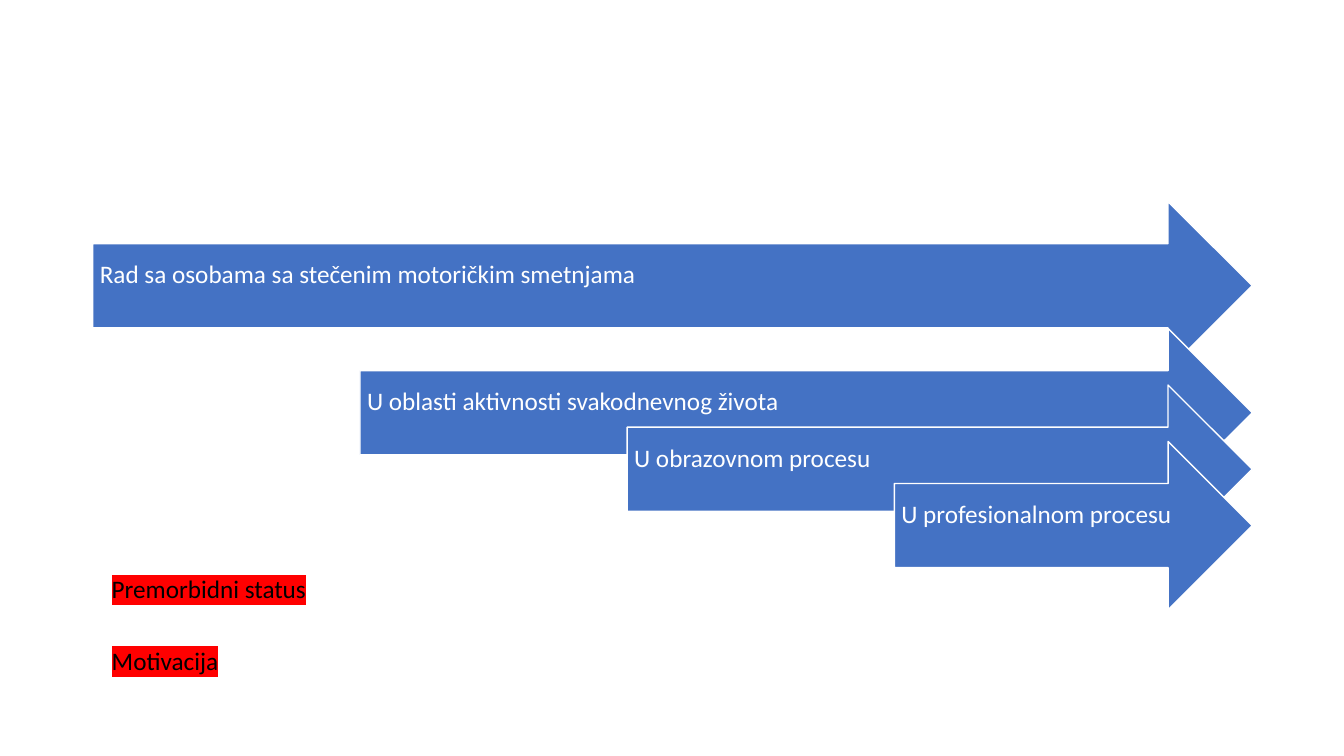
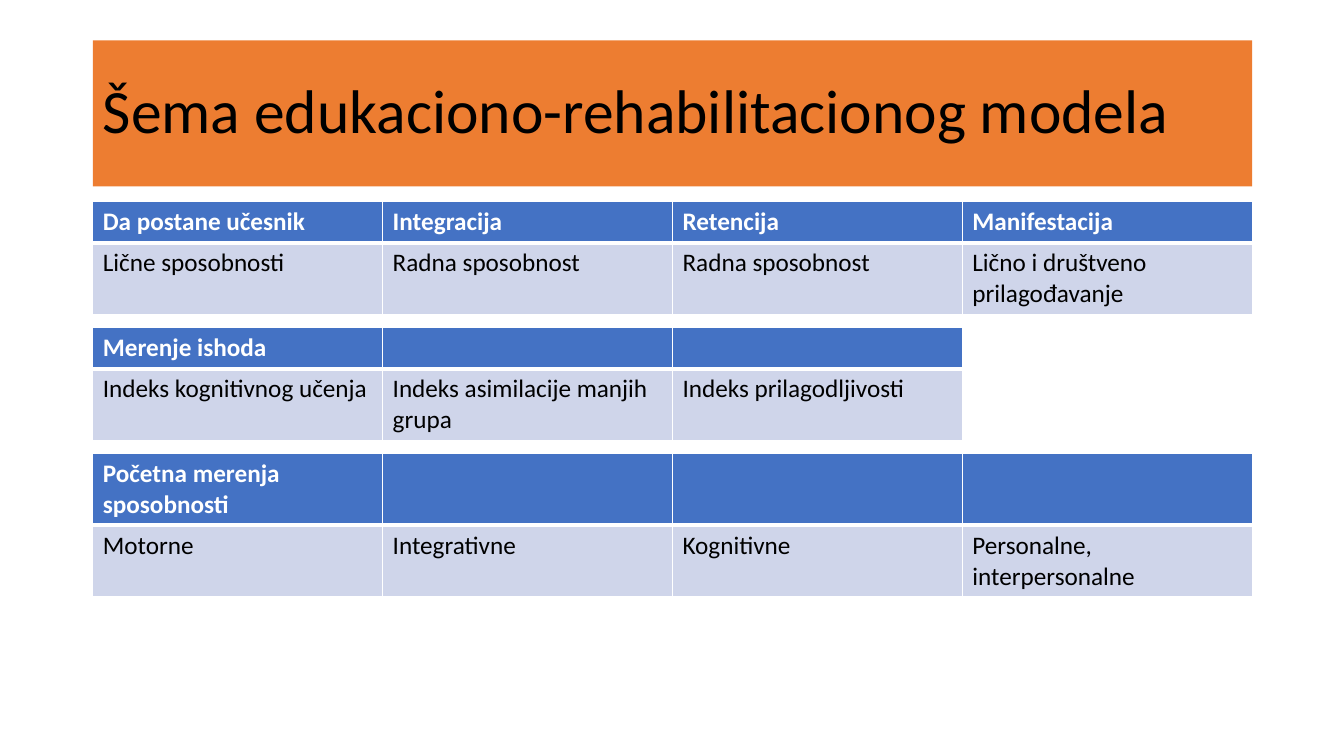
from dataclasses import dataclass

from lxml.etree import SubElement
from pptx import Presentation
from pptx.dml.color import RGBColor
from pptx.enum.shapes import MSO_SHAPE
from pptx.enum.text import MSO_ANCHOR, PP_ALIGN
from pptx.oxml import parse_xml
from pptx.oxml.ns import qn
from pptx.util import Inches, Pt

NS = "http://schemas.openxmlformats.org/drawingml/2006/main"


@dataclass(frozen=True)
class Theme:
    """Colours, type sizes and margins of the deck."""
    blue: str = "4472C4"
    pale: str = "CFD5EA"
    orange: str = "ED7D31"
    red: str = "FF0000"
    white: str = "FFFFFF"
    black: str = "000000"
    font: str = "Calibri"
    head: int = 44
    text: int = 18
    left: float = 0.92
    width: float = 11.5


class Deck:
    """Holds the theme and the current slide, and draws each element."""

    def __init__(self, theme):
        """Start an empty wide deck."""
        self.theme = theme
        self.prs = Presentation()
        self.prs.slide_width = Inches(13.33)
        self.prs.slide_height = Inches(7.5)
        self.slide = None

    def add(self, title=None):
        """Add a slide, with a title band if a title is given."""
        layout = self.prs.slide_layouts[5 if title else 6]
        self.slide = self.prs.slides.add_slide(layout)
        if title:
            self.title(title)

    def paint(self, item, color):
        """Give a shape or cell a solid fill."""
        item.fill.solid()
        item.fill.fore_color.rgb = RGBColor.from_string(color)

    def letter(self, frame, text, color, size=None, bold=False):
        """Put one left-aligned paragraph in a text frame."""
        frame.word_wrap = True
        para = frame.paragraphs[0]
        para.alignment = PP_ALIGN.LEFT
        font = para.font
        font.name = self.theme.font
        font.size = Pt(size or self.theme.text)
        font.bold = bold
        font.color.rgb = RGBColor.from_string(color)
        if text:
            para.add_run().text = text
        return para

    def title(self, text):
        """Fill the title placeholder as a coloured band."""
        t = self.theme
        band = self.slide.shapes.title
        band.left, band.top = Inches(t.left), Inches(0.4)
        band.width, band.height = Inches(t.width), Inches(1.45)
        self.paint(band, t.orange)
        band.text_frame.vertical_anchor = MSO_ANCHOR.MIDDLE
        para = self.letter(band.text_frame, text, t.black, t.head)
        para.line_spacing = 0.9

    def arrow(self, text, indent, top):
        """Draw a labelled arrow that ends at the right margin."""
        t = self.theme
        shape = self.slide.shapes.add_shape(
            MSO_SHAPE.RIGHT_ARROW, Inches(t.left + indent), Inches(top),
            Inches(t.width - indent), Inches(1.67))
        shape.shadow.inherit = False
        self.paint(shape, t.blue)
        shape.line.color.rgb = RGBColor.from_string(t.white)
        shape.line.width = Pt(1)
        frame = shape.text_frame
        frame.vertical_anchor = MSO_ANCHOR.MIDDLE
        frame.margin_left = frame.margin_top = Inches(0.07)
        frame.margin_right, frame.margin_bottom = Inches(0.28), Inches(0.27)
        self.letter(frame, text, t.white).line_spacing = 0.9

    def label(self, text, top, width):
        """Add a highlighted line of text."""
        t = self.theme
        box = self.slide.shapes.add_textbox(
            Inches(1.01), Inches(top), Inches(width), Inches(0.4))
        para = self.letter(box.text_frame, text, t.black)
        props = para.runs[0].font._element
        mark = SubElement(props, qn("a:highlight"))
        SubElement(mark, qn("a:srgbClr"), val=t.red)

    def edge(self, cell, top, bottom):
        """Give a cell white borders."""
        props = cell._tc.get_or_add_tcPr()
        sides = {"L": 1, "R": 1, "T": top, "B": bottom}
        for spot, (side, width) in enumerate(sides.items()):
            props.insert(spot, parse_xml(
                f'<a:ln{side} xmlns:a="{NS}" w="{Pt(width)}"><a:solidFill>'
                f'<a:srgbClr val="{self.theme.white}"/></a:solidFill>'
                f'</a:ln{side}>'))

    def table(self, top, heights, rows):
        """Draw a header row and a body row on the four-column grid."""
        t = self.theme
        count = len(rows[0])
        step = t.width / 4
        grid = self.slide.shapes.add_table(
            len(rows), count, Inches(t.left), Inches(top),
            Inches(step * count), Inches(sum(heights))).table
        for col in grid.columns:
            col.width = Inches(step)
        for r, row in enumerate(rows):
            grid.rows[r].height = Inches(heights[r])
            first = r == 0
            for c, text in enumerate(row):
                cell = grid.cell(r, c)
                self.paint(cell, t.blue if first else t.pale)
                self.edge(cell, *((1, 3) if first else (3, 1)))
                self.letter(cell.text_frame, text,
                            t.white if first else t.black, bold=first)


def main():
    """Build and save both slides."""
    deck = Deck(Theme())

    deck.add()
    arrows = [
        ("Rad sa osobama sa stečenim motoričkim smetnjama", 2),
        ("U oblasti aktivnosti svakodnevnog života", 3.26),
        ("U obrazovnom procesu", 3.82),
        ("U profesionalnom procesu", 4.38),
    ]
    for level, (text, top) in enumerate(arrows):
        deck.arrow(text, level * 2.65, top)
    deck.label("Premorbidni status", 5.64, 3.11)
    deck.label("Motivacija", 6.35, 2.89)

    deck.add("Šema edukaciono-rehabilitacionog modela")
    tables = [
        (0.41, [
            ["Da postane učesnik", "Integracija", "Retencija",
             "Manifestacija"],
            ["Lične sposobnosti", "Radna sposobnost", "Radna sposobnost",
             "Lično i društveno prilagođavanje"]]),
        (0.41, [
            ["Merenje ishoda", "", ""],
            ["Indeks kognitivnog učenja", "Indeks asimilacije manjih grupa",
             "Indeks prilagodljivosti"]]),
        (0.7, [
            ["Početna merenja sposobnosti", "", "", ""],
            ["Motorne", "Integrativne", "Kognitivne",
             "Personalne, interpersonalne"]]),
    ]
    for place, (head, rows) in enumerate(tables):
        deck.table(2 + place * 1.25, (head, 0.7), rows)

    deck.prs.save("out.pptx")


if __name__ == "__main__":
    main()
